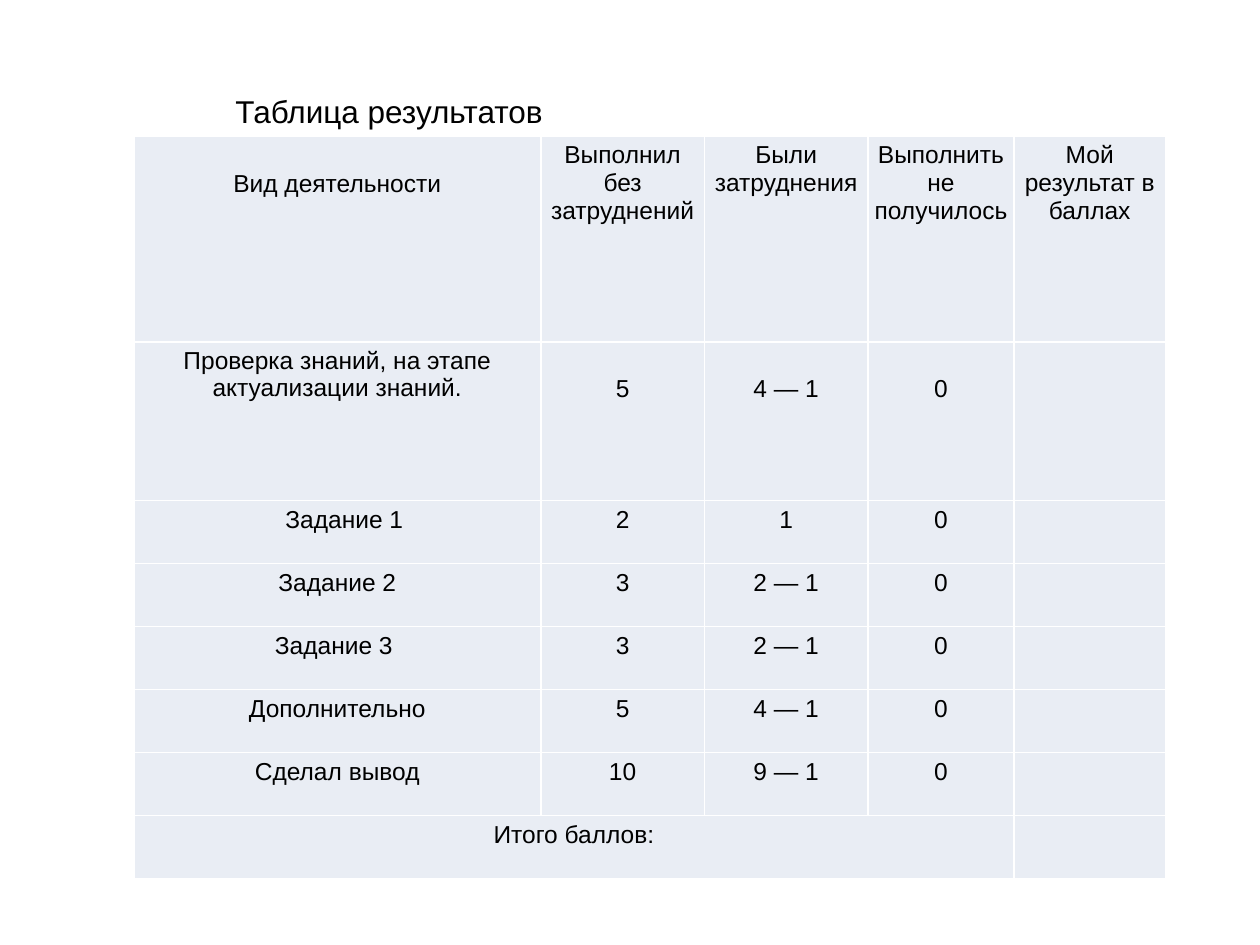
from lxml import etree
from pptx import Presentation
from pptx import util as u
from pptx.dml.color import RGBColor
from pptx.enum import text
from pptx.oxml import ns

COLUMN_WIDTHS = [232.5, 93.5, 93.5, 83.5, 86.5]
ROW_HEIGHTS = [117.4, 90.7] + [36] * 6
ROWS = [
    ["Вид деятельности", "Выполнил без затруднений", "Были затруднения",
     "Выполнить не получилось", "Мой результат в баллах"],
    ["Проверка знаний, на этапе актуализации знаний.", "5", "4 — 1", "0", ""],
    ["Задание 1", "2", "1", "0", ""],
    ["Задание 2", "3", "2 — 1", "0", ""],
    ["Задание 3", "3", "2 — 1", "0", ""],
    ["Дополнительно", "5", "4 — 1", "0", ""],
    ["Сделал вывод", "10", "9 — 1", "0", ""],
    ["Итого баллов:", "", "", "", ""],
]
LINE = 16
LOWERED = {(0, 0), (1, 1), (1, 2), (1, 3)}
EXTRA_LEFT = {(2, 0): 8}
EXTRA_RIGHT = {(4, 0): 4}


def color(value):
    return RGBColor.from_string(value)


def write(frame, words, size=14, font="Arial", ink="000000", align=text.PP_ALIGN.LEFT):
    para = frame.paragraphs[0]
    para.alignment = align
    span = para.add_run()
    span.text = words
    span.font.size = u.Pt(size)
    span.font.name = font
    span.font.color.rgb = color(ink)


class ResultsSlide:
    cell_fill = "E9EDF4"
    border = "FFFFFF"
    inset = 3

    def __init__(self, deck):
        self.page = deck.slides.add_slide(deck.slide_layouts[6])

    def title(self, words, left, top, width, height):
        box = self.page.shapes.add_textbox(u.Pt(left), u.Pt(top), u.Pt(width), u.Pt(height))
        box.text_frame.word_wrap = True
        box.text_frame.auto_size = text.MSO_AUTO_SIZE.SHAPE_TO_FIT_TEXT
        write(box.text_frame, words, size=18)

    def outline(self, cell):
        properties = cell._tc.get_or_add_tcPr()
        for place, side in enumerate(("lnL", "lnR", "lnT", "lnB")):
            line = etree.Element(ns.qn(f"a:{side}"), w=str(u.Pt(1)))
            fill = etree.SubElement(line, ns.qn("a:solidFill"))
            etree.SubElement(fill, ns.qn("a:srgbClr"), val=self.border)
            properties.insert(place, line)

    def cell(self, cell, words, place):
        cell.fill.solid()
        cell.fill.fore_color.rgb = color(self.cell_fill)
        self.outline(cell)
        cell.margin_left = u.Pt(self.inset + EXTRA_LEFT.get(place, 0))
        cell.margin_right = u.Pt(self.inset + EXTRA_RIGHT.get(place, 0))
        cell.margin_top = u.Pt(self.inset + LINE * (place in LOWERED))
        cell.margin_bottom = u.Pt(self.inset)
        if words:
            write(cell.text_frame, words, align=text.PP_ALIGN.CENTER)

    def table(self, rows, left, top, widths, heights):
        table = self.page.shapes.add_table(
            len(rows), len(widths), u.Pt(left), u.Pt(top),
            u.Pt(sum(widths)), u.Pt(sum(heights))).table
        table.first_row = table.horz_banding = False
        for column, width in zip(table.columns, widths):
            column.width = u.Pt(width)
        for row, height in zip(table.rows, heights):
            row.height = u.Pt(height)
        for r, row in enumerate(rows):
            for c, words in enumerate(row):
                self.cell(table.cell(r, c), words, (r, c))
        last = len(rows) - 1
        table.cell(last, 0).merge(table.cell(last, len(widths) - 2))


def main():
    deck = Presentation()
    deck.slide_width, deck.slide_height = u.Pt(720), u.Pt(540)
    slide = ResultsSlide(deck)
    slide.title("Таблица результатов", 127.5, 49, 391, 29)
    slide.table(ROWS, 76.5, 78, COLUMN_WIDTHS, ROW_HEIGHTS)
    deck.save("out.pptx")


if __name__ == "__main__":
    main()
